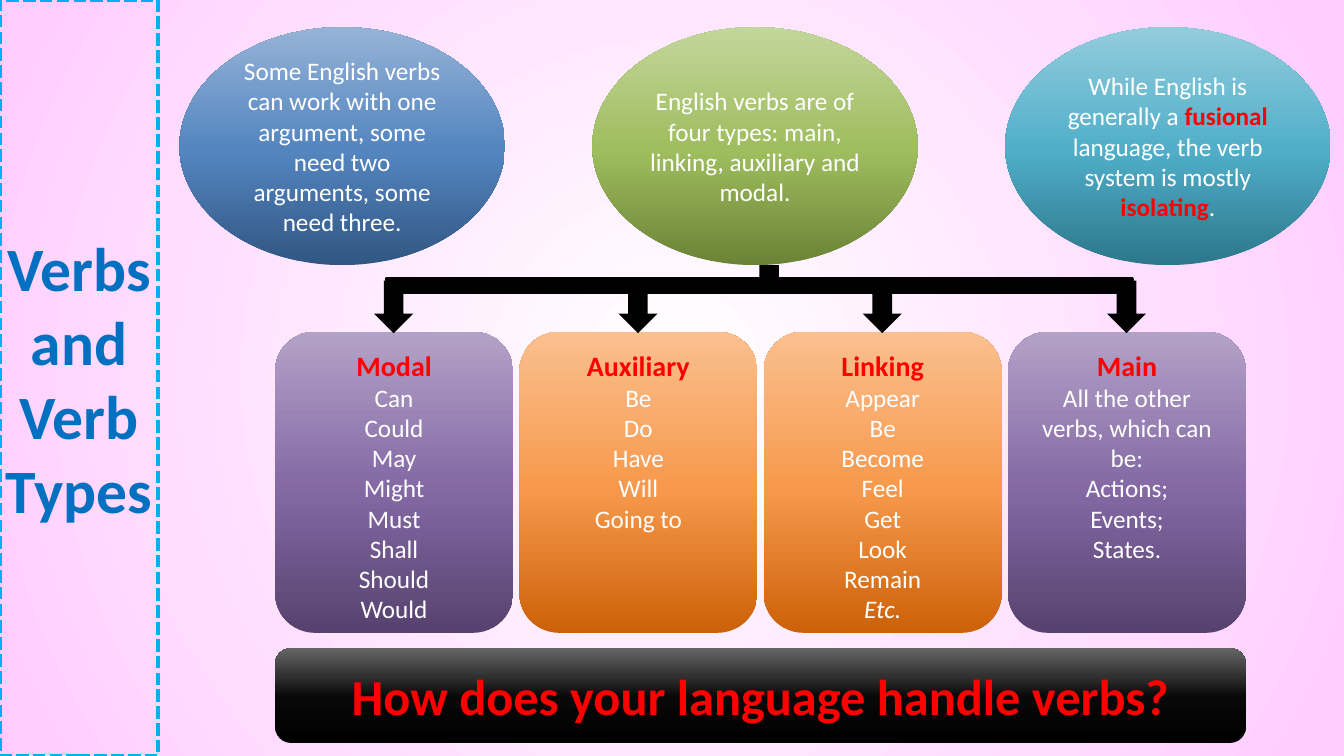
import pptx
import pptx.dml.color
import pptx.enum.dml
import pptx.enum.shapes
import pptx.enum.text
import pptx.oxml
import pptx.oxml.ns
import pptx.util

Pt = pptx.util.Pt
SHAPES = pptx.enum.shapes.MSO_SHAPE
ANCHORS = pptx.enum.text.MSO_ANCHOR
WHITE, RED, BLACK = "FFFFFF", "FF0000", "000000"
BLUE = ("315683", "5485BF", "95B3D7")
GREEN = ("6A8336", "9EBD5E", "C3D69B")
TEAL = ("2C778B", "50AEC8", "93CDDD")
PURPLE = ("56426E", "8469A5", "B3A2C7")
ORANGE = ("CC6109", "F7994C", "FAC090")
CHARCOAL = ("000000", "080808", "666666")
UPWARD = '<a:lin ang="16200000" scaled="0"/>'
FROM_CENTRE = '<a:path path="circle"><a:fillToRect l="50000" t="50000" r="50000" b="50000"/></a:path>'


def color(value):
    """Return the colour for a hex string."""
    return pptx.dml.color.RGBColor.from_string(value)


def set_gradient(fill, owner, stops, direction):
    """Give the owner element a gradient of (percent, colour) stops."""
    fill.gradient()
    gradient = owner.find(".//" + pptx.oxml.ns.qn("a:gradFill"))
    stop_xml = "".join(
        f'<a:gs pos="{percent * 1000}"><a:srgbClr val="{value}"/></a:gs>' for percent, value in stops
    )
    replacement = pptx.oxml.parse_xml(
        f'<a:gradFill {pptx.oxml.ns.nsdecls("a")} rotWithShape="1">'
        f"<a:gsLst>{stop_xml}</a:gsLst>{direction}</a:gradFill>"
    )
    gradient.getparent().replace(gradient, replacement)


def add_shape(slide, kind, box, fill=None):
    """Add a borderless shape with a plain fill, a three-colour gradient or none."""
    shape = slide.shapes.add_shape(kind, *(Pt(length) for length in box))
    shape.shadow.inherit = False
    shape.line.fill.background()
    if fill is None:
        shape.fill.background()
    elif isinstance(fill, str):
        shape.fill.solid()
        shape.fill.fore_color.rgb = color(fill)
    else:
        set_gradient(shape.fill, shape._element.spPr, zip((0, 48, 100), fill), UPWARD)
    return shape


def write_text(shape, paragraphs, anchor=ANCHORS.MIDDLE):
    """Write centred paragraphs of (text, size, colour, bold, italic) runs."""
    frame = shape.text_frame
    frame.word_wrap = True
    frame.vertical_anchor = anchor
    for index, runs in enumerate(paragraphs):
        paragraph = frame.paragraphs[0] if index == 0 else frame.add_paragraph()
        paragraph.alignment = pptx.enum.text.PP_ALIGN.CENTER
        for text, size, value, bold, italic in runs:
            run = paragraph.add_run()
            run.text = text
            run.font.name = "Calibri"
            run.font.size = Pt(size)
            run.font.color.rgb = color(value)
            run.font.bold = bold
            run.font.italic = italic


def body(text, italic=False):
    """Return a white body run."""
    return text, 18, WHITE, False, italic


def keyword(text):
    """Return a red bold body run."""
    return text, 18, RED, True, False


def add_title(slide, box):
    """Add the dashed title panel."""
    panel = add_shape(slide, SHAPES.RECTANGLE, box)
    panel.line.color.rgb = color("00B0F0")
    panel.line.width = Pt(3)
    panel.line.dash_style = pptx.enum.dml.MSO_LINE.SQUARE_DOT
    panel.text_frame.margin_left = panel.text_frame.margin_right = 0
    write_text(panel, [[("Verbs and Verb Types", 44, "0070C0", True, False)]])


def add_facts(slide, box, facts):
    """Spread fact ellipses evenly over the box."""
    left, top, width, height = box
    ellipse_width = 232.5
    pitch = (width - ellipse_width) / (len(facts) - 1)
    for index, (fill, runs) in enumerate(facts):
        ellipse = add_shape(slide, SHAPES.OVAL, (left + index * pitch, top, ellipse_width, height), fill)
        write_text(ellipse, [runs])


def add_verb_cards(slide, box, cards):
    """Add a row of cards, each with a heading and its verbs."""
    left, top, width, height = box
    gap = 4.5
    card_width = (width - gap * (len(cards) - 1)) / len(cards)
    for index, (fill, heading, lines) in enumerate(cards):
        card_box = (left + index * (card_width + gap), top, card_width, height)
        card = add_shape(slide, SHAPES.ROUNDED_RECTANGLE, card_box, fill)
        paragraphs = [[(heading, 20, RED, True, False)]]
        paragraphs += [[body(line, line == "Etc.")] for line in lines]
        write_text(card, paragraphs, ANCHORS.TOP)


def add_question(slide, box):
    """Add the closing question banner."""
    banner = add_shape(slide, SHAPES.ROUNDED_RECTANGLE, box, CHARCOAL)
    write_text(banner, [[("How does your language handle verbs?", 36, RED, True, False)]])


def add_branches(slide, box, count):
    """Add a stem, a crossbar and one arrow to the middle of each card."""
    left, top, width, height = box
    arrow_width = 28
    pitch = (width - arrow_width) / (count - 1)
    add_shape(slide, SHAPES.DOWN_ARROW, (left + width / 2 - 7.5, top, arrow_width, 18), BLACK)
    crossbar = add_shape(slide, SHAPES.RECTANGLE, (left + 8.5, top + 9.5, width - 18, 10), BLACK)
    crossbar.line.color.rgb = color(BLACK)
    crossbar.line.width = Pt(2)
    for index in range(count):
        arrow_box = (left + index * pitch, top + 11, arrow_width, height - 11)
        add_shape(slide, SHAPES.DOWN_ARROW, arrow_box, BLACK)


def main():
    """Build and save the slide."""
    presentation = pptx.Presentation()
    presentation.slide_width, presentation.slide_height = Pt(960), Pt(540)
    slide = presentation.slides.add_slide(presentation.slide_layouts[6])
    set_gradient(slide.background.fill, slide._element, [(0, WHITE), (100, "FFCCFF")], FROM_CENTRE)

    facts = [
        (BLUE, [body("Some English verbs can work with one argument, some need two arguments, some need three.")]),
        (GREEN, [body("English verbs are of four types: main, linking, auxiliary and modal.")]),
        (TEAL, [
            body("While English is generally a "), keyword("fusional"),
            body(" language, the verb system is mostly "), keyword("isolating"), body("."),
        ]),
    ]
    cards = [
        (PURPLE, "Modal", ["Can", "Could", "May", "Might", "Must", "Shall", "Should", "Would"]),
        (ORANGE, "Auxiliary", ["Be", "Do", "Have", "Will", "Going to"]),
        (ORANGE, "Linking", ["Appear", "Be", "Become", "Feel", "Get", "Look", "Remain", "Etc."]),
        (PURPLE, "Main", ["All the other verbs, which can be:", "Actions;", "Events;", "States."]),
    ]
    add_title(slide, (0, 0, 113, 540))
    add_facts(slide, (128.2, 19.4, 822.3, 170), facts)
    add_verb_cards(slide, (196.5, 237, 693.5, 215), cards)
    add_question(slide, (196.5, 463, 693.5, 67.7))
    add_branches(slide, (267.2, 189.4, 551.5, 48.6), len(cards))
    presentation.save("out.pptx")


if __name__ == "__main__":
    main()
